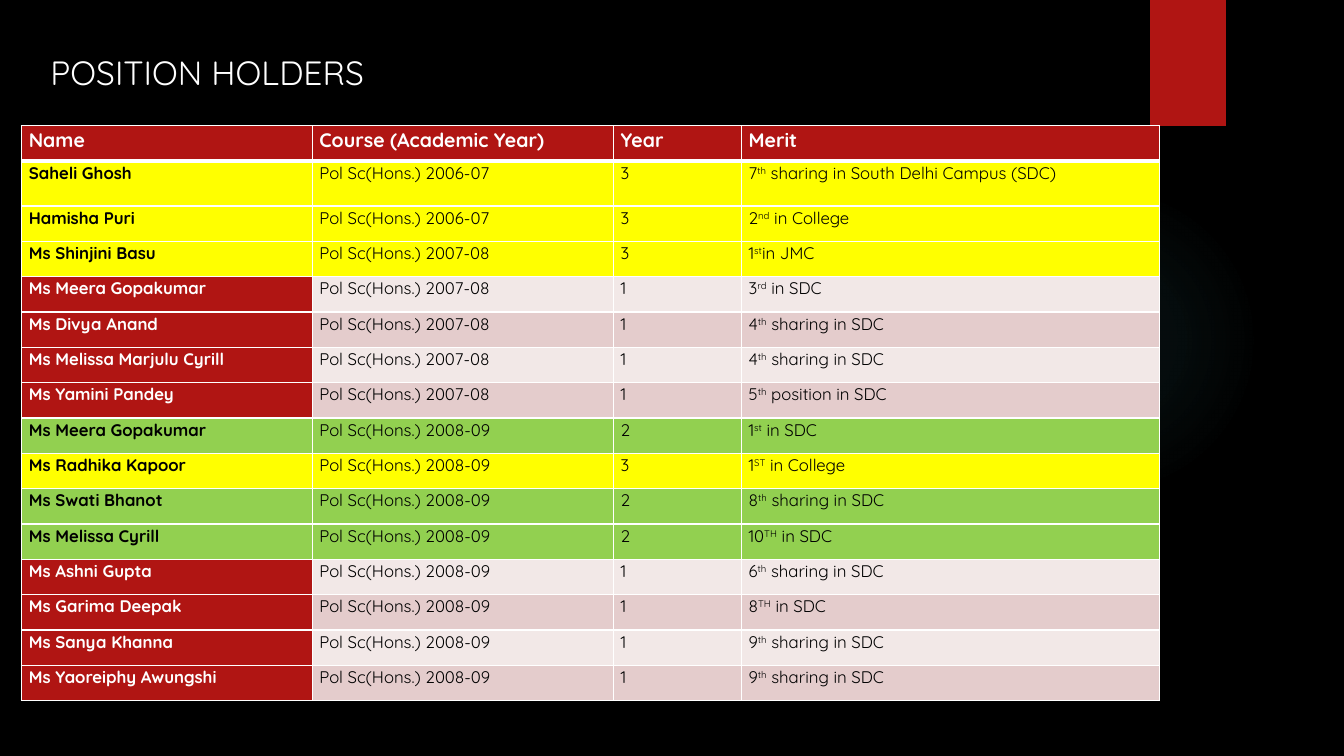
from typing import NamedTuple

from lxml.etree import SubElement
from pptx import Presentation
from pptx.dml.color import RGBColor
from pptx.enum.shapes import MSO_SHAPE
from pptx.enum.text import MSO_ANCHOR, MSO_AUTO_SIZE, PP_ALIGN
from pptx.oxml import parse_xml
from pptx.oxml.ns import nsdecls, qn
from pptx.util import Pt

FONT = "Quicksand"
BLACK, WHITE, RED = "000000", "FFFFFF", "B01513"
YEAR_FILLS = {"3": "FFFF00", "2": "92D050"}
BAND_FILLS = ("F2E8E7", "E4CCCC")
HEADINGS = ("Name", "Course (Academic Year)", "Year", "Merit")
COLUMN_WIDTHS = (207.6, 215.1, 91.5, 298.7)
ROW_HEIGHT, TALL_ROW_HEIGHT = 25.25, 32.2


class Holder(NamedTuple):
    """A student who won a position."""
    name: str
    session: str
    year: str
    rank: str
    ordinal: str
    detail: str


class TextRun(NamedTuple):
    """A piece of text in one style."""
    text: str
    size: float = 12
    color: str = BLACK
    bold: bool = False
    raised: bool = False


HOLDERS = (
    Holder("Saheli Ghosh", "2006-07", "3", "7", "th", " sharing in South Delhi Campus (SDC)"),
    Holder("Hamisha Puri", "2006-07", "3", "2", "nd", " in College"),
    Holder("Ms Shinjini Basu", "2007-08", "3", "1", "st", "in JMC"),
    Holder("Ms Meera Gopakumar", "2007-08", "1", "3", "rd", " in SDC"),
    Holder("Ms Divya Anand", "2007-08", "1", "4", "th", " sharing in SDC"),
    Holder("Ms Melissa Marjulu Cyrill", "2007-08", "1", "4", "th", " sharing in SDC"),
    Holder("Ms Yamini Pandey", "2007-08", "1", "5", "th", " position in SDC"),
    Holder("Ms Meera Gopakumar", "2008-09", "2", "1", "st", " in SDC"),
    Holder("Ms Radhika Kapoor", "2008-09", "3", "1", "ST", " in College"),
    Holder("Ms Swati Bhanot", "2008-09", "2", "8", "th", " sharing in SDC"),
    Holder("Ms Melissa Cyrill", "2008-09", "2", "10", "TH", " in SDC"),
    Holder("Ms Ashni Gupta", "2008-09", "1", "6", "th", " sharing in SDC"),
    Holder("Ms Garima Deepak", "2008-09", "1", "8", "TH", " in SDC"),
    Holder("Ms Sanya Khanna", "2008-09", "1", "9", "th", " sharing in SDC"),
    Holder("Ms Yaoreiphy Awungshi", "2008-09", "1", "9", "th", " sharing in SDC"),
)


def set_solid(fill, color: str) -> None:
    """Give a fill one solid colour."""
    fill.solid()
    fill.fore_color.rgb = RGBColor.from_string(color)


def add_run(paragraph, text_run: TextRun) -> None:
    """Append one styled run to a paragraph."""
    run = paragraph.add_run()
    run.text = text_run.text
    run.font.name = FONT
    run.font.size = Pt(text_run.size)
    run.font.bold = text_run.bold
    set_solid(run.font.fill, text_run.color)
    if text_run.raised:
        run.font._element.set("baseline", "30000")


def add_plain_shape(slide, kind: MSO_SHAPE, left: float, top: float, width: float, height: float):
    """Add a preset shape without outline or inherited shadow."""
    shape = slide.shapes.add_shape(kind, Pt(left), Pt(top), Pt(width), Pt(height))
    shape.shadow.inherit = False
    shape.line.fill.background()
    return shape


def add_glow(slide) -> None:
    """Add the faint round glow at the right."""
    glow = add_plain_shape(slide, MSO_SHAPE.OVAL, 677.5, 131.8, 221.8, 221.8)
    stops = "".join(
        f'<a:gs pos="{position}000"><a:srgbClr val="50B9C1"><a:alpha val="{alpha}000"/></a:srgbClr></a:gs>'
        for position, alpha in ((0, 7), (36, 6), (69, 0)))
    gradient = parse_xml(
        f'<a:gradFill {nsdecls("a")}><a:gsLst>{stops}</a:gsLst><a:path path="circle">'
        '<a:fillToRect l="50000" t="50000" r="50000" b="50000"/></a:path></a:gradFill>')
    glow._element.spPr.find(qn("a:prstGeom")).addnext(gradient)


def add_ribbon(slide) -> None:
    """Add the red block hanging from the top edge."""
    ribbon = add_plain_shape(slide, MSO_SHAPE.RECTANGLE, 821.6, 0, 54, 90)
    set_solid(ribbon.fill, RED)
    effects = ribbon._element.spPr.find(qn("a:effectLst"))
    effects.append(parse_xml(
        f'<a:outerShdw {nsdecls("a")} blurRad="{Pt(3)}" dist="{Pt(2)}" dir="5400000">'
        f'<a:srgbClr val="{BLACK}"><a:alpha val="45000"/></a:srgbClr></a:outerShdw>'))


def add_title(slide) -> None:
    """Place and fill the title."""
    title = slide.shapes.title
    title.left, title.top, title.width, title.height = Pt(28.8), Pt(33.8), Pt(659.5), Pt(36.4)
    frame = title.text_frame
    frame.word_wrap = True
    frame.auto_size = MSO_AUTO_SIZE.SHAPE_TO_FIT_TEXT
    frame.vertical_anchor = MSO_ANCHOR.TOP
    frame.paragraphs[0].alignment = PP_ALIGN.LEFT
    add_run(frame.paragraphs[0], TextRun("POSITION HOLDERS", 24, WHITE))


def fill_cell(cell, runs: list[TextRun], color: str, top: float = 1, bottom: float = 1) -> None:
    """Write a cell with white borders and a solid fill."""
    cell.margin_left = cell.margin_right = Pt(5.2)
    cell.margin_top = cell.margin_bottom = Pt(0)
    properties = cell._tc.get_or_add_tcPr()
    for side, width in (("L", 1), ("R", 1), ("T", top), ("B", bottom)):
        border = SubElement(properties, qn(f"a:ln{side}"), w=str(Pt(width)))
        SubElement(SubElement(border, qn("a:solidFill")), qn("a:srgbClr"), val=WHITE)
    set_solid(cell.fill, color)
    paragraph = cell.text_frame.paragraphs[0]
    paragraph.line_spacing = 1.07
    for text_run in runs:
        add_run(paragraph, text_run)


def add_holder_table(slide) -> None:
    """Add the table of position holders."""
    row_heights = [ROW_HEIGHT, TALL_ROW_HEIGHT] + [ROW_HEIGHT] * (len(HOLDERS) - 1)
    table = slide.shapes.add_table(
        len(row_heights), len(HEADINGS), Pt(15.4), Pt(89.8),
        Pt(sum(COLUMN_WIDTHS)), Pt(sum(row_heights))).table
    for column, width in zip(table.columns, COLUMN_WIDTHS):
        column.width = Pt(width)
    for row, height in zip(table.rows, row_heights):
        row.height = Pt(height)
    for column, heading in enumerate(HEADINGS):
        fill_cell(table.cell(0, column), [TextRun(heading, 14, WHITE, True)], RED, bottom=3)
    for row, holder in enumerate(HOLDERS, 1):
        highlight = YEAR_FILLS.get(holder.year)
        name_color = BLACK if highlight else WHITE
        contents = (
            [TextRun(holder.name, color=name_color, bold=True)],
            [TextRun(f"Pol Sc(Hons.) {holder.session}")],
            [TextRun(holder.year)],
            [TextRun(holder.rank), TextRun(holder.ordinal, raised=True), TextRun(holder.detail)],
        )
        for column, runs in enumerate(contents):
            color = highlight or (BAND_FILLS[row % 2] if column else RED)
            fill_cell(table.cell(row, column), runs, color, top=3 if row == 1 else 1)


def main() -> None:
    """Build and save the presentation."""
    presentation = Presentation()
    presentation.slide_width, presentation.slide_height = Pt(960), Pt(540)
    slide = presentation.slides.add_slide(presentation.slide_layouts[5])
    set_solid(slide.background.fill, BLACK)
    add_glow(slide)
    add_ribbon(slide)
    add_holder_table(slide)
    add_title(slide)
    presentation.save("out.pptx")


if __name__ == "__main__":
    main()
